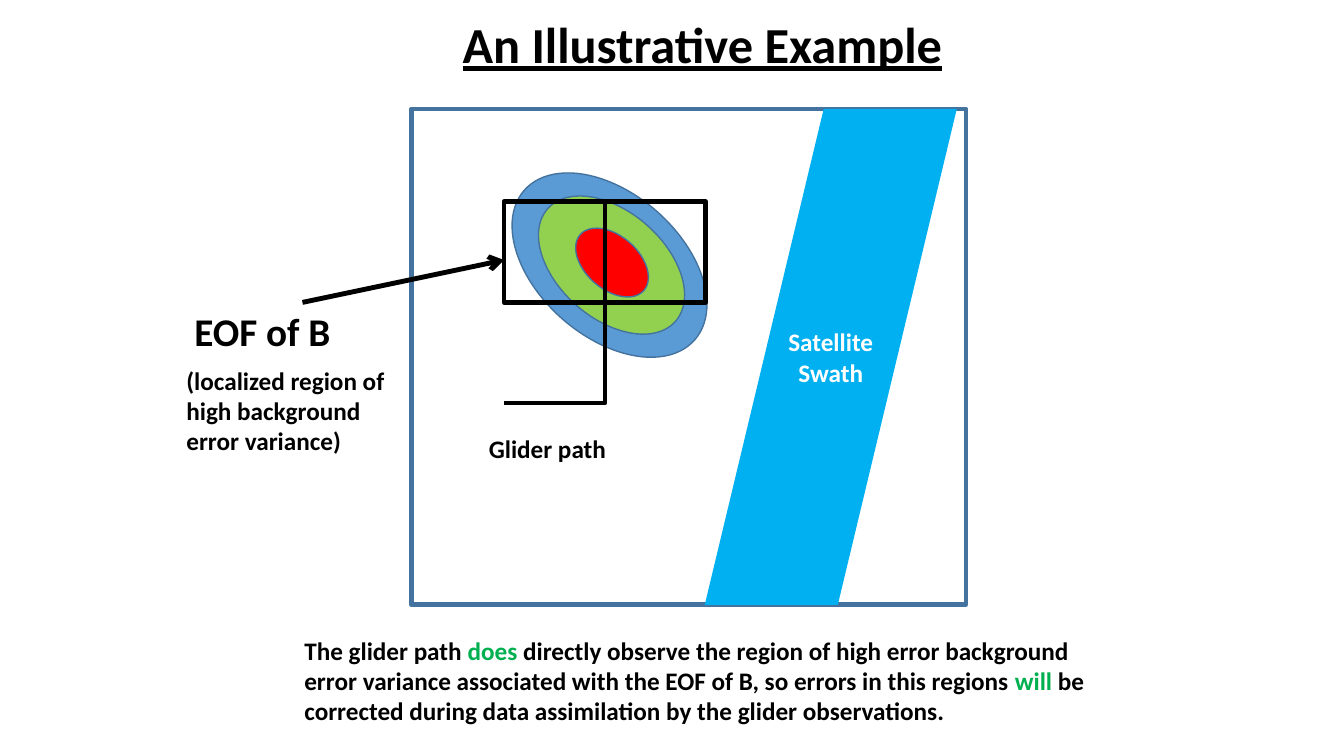
from lxml import etree
from pptx import Presentation
from pptx.dml.color import RGBColor as RGB
from pptx.enum.shapes import MSO_CONNECTOR as LINE, MSO_SHAPE as SHAPE
from pptx.enum.text import MSO_ANCHOR as ANCHOR, MSO_AUTO_SIZE as AUTO, PP_ALIGN as ALIGN
from pptx.oxml.ns import qn
from pptx.util import Inches, Pt

BLACK = RGB(0x00, 0x00, 0x00)
WHITE = RGB(0xFF, 0xFF, 0xFF)
GREEN = RGB(0x00, 0xB0, 0x50)
EDGE = RGB(0x43, 0x73, 0x9E)
SKY = RGB(0x00, 0xB0, 0xF0)
FONT = "Calibri"

FRAME = (4.08, 1.08, 5.5, 4.92)
SWATH = (6.99, 1.08, 2.5, 4.92)
SLANT = 0.472
SWATH_TEXT = ["Satellite", "Swath"]
TILT = 41.3
# left, top, width, height, fill
RINGS = [
    (4.92, 1.92, 2.25, 1.42, RGB(0x5B, 0x9B, 0xD5)),
    (5.22, 2.10, 1.69, 1.06, RGB(0x92, 0xD0, 0x50)),
    (5.65, 2.34, 0.84, 0.53, RGB(0xFF, 0x00, 0x00)),
]
ARROW = (3, 3, 5, 2.58)
# start of the glider path, then two handles and an end for each curve
START = (6.32, 1.74)
CURVES = [
    ((5.65, 2.27), (4.98, 2.79), (5.08, 2.88)),
    ((5.17, 2.97), (6.79, 2.19), (6.88, 2.27)),
    ((6.97, 2.36), (5.84, 3.10), (5.61, 3.39)),
    ((5.37, 3.69), (5.49, 3.90), (5.47, 4.03)),
    ((5.45, 4.16), (5.47, 4.17), (5.48, 4.18)),
]
STEPS = 24
# box, size, wrap, paragraphs; each paragraph is a list of (text, colour)
TITLE = ((4.49, 0.08, 5.01, 0.71), 36, False, [[("An Illustrative Example", BLACK)]])
LABELS = [
    ((1.83, 3, 1.57, 0.57), 28, False, [[("EOF of B", BLACK)]]),
    ((1.75, 3.57, 2.18, 1.01), 18, False, [
        [("(localized region of", BLACK)],
        [("high background", BLACK)],
        [("error variance)", BLACK)],
    ]),
    ((2.92, 6.25, 8.08, 1.01), 18, True, [[
        ("The glider path ", BLACK),
        ("does", GREEN),
        (" directly observe the region of high error background error variance "
         "associated with the EOF of B, so errors in this regions ", BLACK),
        ("will", GREEN),
        (" be corrected during data assimilation by the glider observations.", BLACK),
    ]]),
    ((4.75, 4.25, 1.37, 0.4), 18, False, [[("Glider path", BLACK)]]),
]


def inches(box):
    return [Inches(v) for v in box]


def style(shape, fill=None, edge=None, width=1):
    shape.shadow.inherit = False
    if fill is None:
        shape.fill.background()
    else:
        shape.fill.solid()
        shape.fill.fore_color.rgb = fill
    if edge is None:
        shape.line.fill.background()
    else:
        shape.line.color.rgb = edge
        shape.line.width = Pt(width)


def write(frame, paras, size, align=ALIGN.LEFT, under=None):
    for i, runs in enumerate(paras):
        para = frame.add_paragraph() if i else frame.paragraphs[0]
        para.alignment = align
        font = para.font
        font.name, font.size, font.bold, font.underline = FONT, Pt(size), True, under
        for text, color in runs:
            run = para.add_run()
            run.text = text
            run.font.color.rgb = color


def label(shapes, box, size, wrap, paras, under=None):
    frame = shapes.add_textbox(*inches(box)).text_frame
    frame.word_wrap = wrap
    frame.auto_size = AUTO.SHAPE_TO_FIT_TEXT
    write(frame, paras, size, under=under)


def trace(start, curves):
    """Return points along a chain of cubic Bézier curves."""
    points = []
    for a, b, end in curves:
        for i in range(1, STEPS + 1):
            t = i / STEPS
            u = 1 - t
            points.append(tuple(
                u**3 * p + 3 * u * u * t * q + 3 * u * t * t * r + t**3 * s
                for p, q, r, s in zip(start, a, b, end)))
        start = end
    return points


def main():
    deck = Presentation()
    deck.slide_width, deck.slide_height = Inches(13.33), Inches(7.5)
    shapes = deck.slides.add_slide(deck.slide_layouts[6]).shapes

    frame = shapes.add_shape(SHAPE.RECTANGLE, *inches(FRAME))
    style(frame, edge=EDGE, width=3.25)

    group = shapes.add_group_shape()
    for *box, fill in RINGS:
        ring = group.shapes.add_shape(SHAPE.OVAL, *inches(box))
        ring.rotation = TILT
        style(ring, fill, EDGE)

    swath = shapes.add_shape(SHAPE.PARALLELOGRAM, *inches(SWATH))
    swath.adjustments[0] = SLANT
    style(swath, SKY)
    swath.text_frame.vertical_anchor = ANCHOR.MIDDLE
    write(swath.text_frame, [[(text, WHITE)] for text in SWATH_TEXT], 18, ALIGN.CENTER)

    label(shapes, *TITLE, under=True)

    arrow = shapes.add_connector(LINE.STRAIGHT, *inches(ARROW))
    arrow.line.color.rgb = BLACK
    arrow.line.width = Pt(3.5)
    etree.SubElement(arrow.line._get_or_add_ln(), qn("a:tailEnd"), type="arrow")
    etree.SubElement(arrow._element.spPr, qn("a:effectLst"))

    pen = shapes.build_freeform(*START, scale=Inches(1))
    pen.add_line_segments(trace(START, CURVES), close=False)
    style(pen.convert_to_shape(), edge=BLACK, width=3.25)

    for item in LABELS:
        label(shapes, *item)

    deck.save("out.pptx")


if __name__ == "__main__":
    main()
